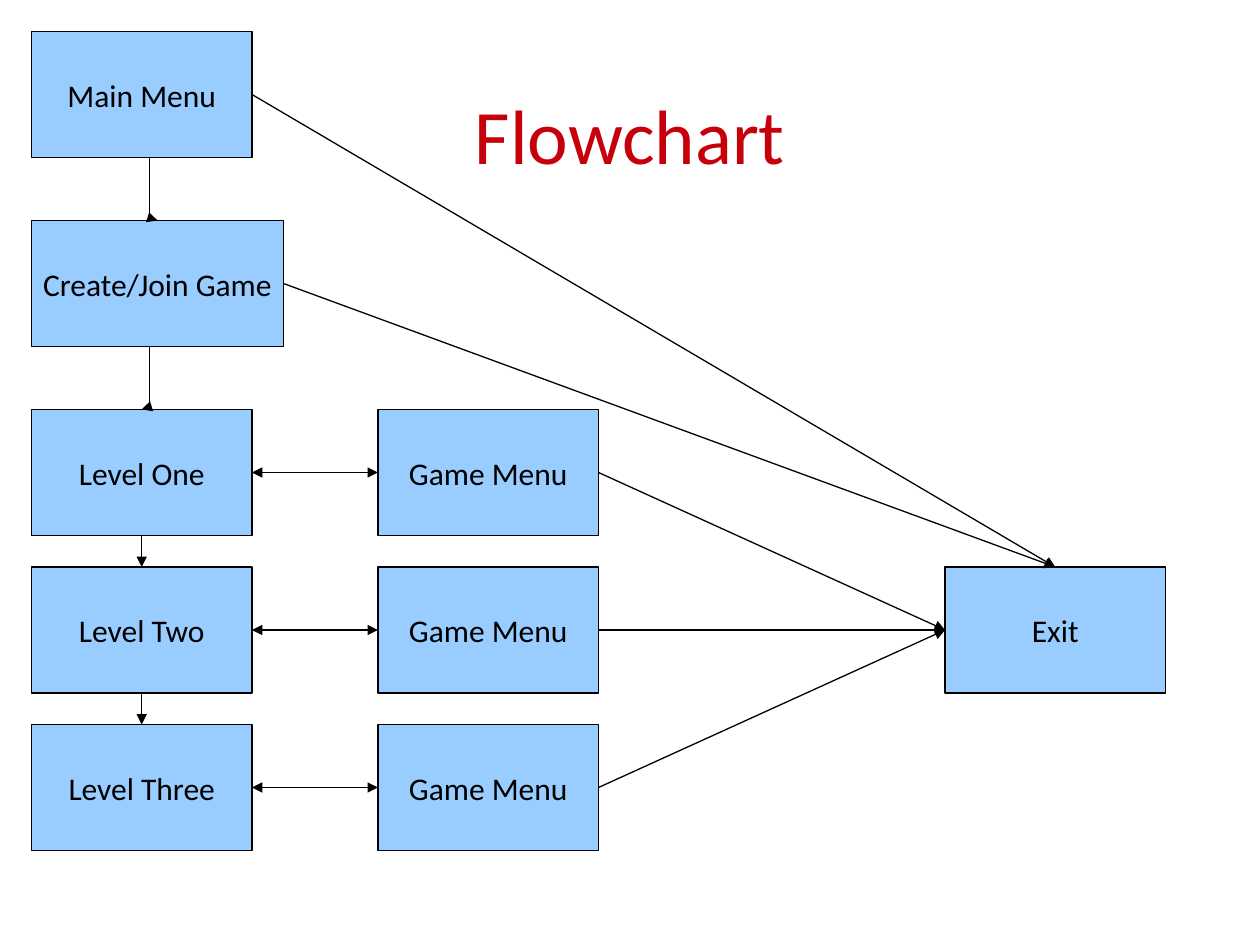
"""Build the game flowchart slide."""
from lxml import etree
from pptx import Presentation
from pptx.dml.color import RGBColor
from pptx.enum.shapes import MSO_CONNECTOR, MSO_SHAPE
from pptx.enum.text import MSO_ANCHOR, PP_ALIGN
from pptx.oxml.ns import qn
from pptx.util import Pt

EMU_PER_PX = 9525
RECTANGLE = MSO_SHAPE.RECTANGLE
STRAIGHT, ELBOW = MSO_CONNECTOR.STRAIGHT, MSO_CONNECTOR.ELBOW
MIDDLE, CENTER = MSO_ANCHOR.MIDDLE, PP_ALIGN.CENTER
TOP, LEFT, BOTTOM, RIGHT = range(4)


def px(*lengths):
    return [length * EMU_PER_PX for length in lengths]


def color(hex_code):
    return RGBColor.from_string(hex_code)


def write(frame, text, size, ink="000000", font="Calibri", wrap=False, spacing=None):
    frame.word_wrap = wrap
    frame.vertical_anchor = MIDDLE
    paragraph = frame.paragraphs[0]
    paragraph.alignment = CENTER
    if spacing:
        paragraph.line_spacing = spacing
    run = paragraph.add_run()
    run.text = text
    run.font.name = font
    run.font.size = Pt(size)
    run.font.color.rgb = color(ink)


class Flowchart:
    box_fill = "99CCFF"
    ink = "000000"
    line_width = Pt(0.75)

    def __init__(self, slide):
        self.slide = slide

    def title(self, text, left, top, width, height):
        heading = self.slide.shapes.add_textbox(*px(left, top, width, height))
        write(heading.text_frame, text, size=44, ink="C5000B", wrap=True, spacing=1.02)

    def step(self, text, left, top, width=168, height=96):
        box = self.slide.shapes.add_shape(RECTANGLE, *px(left, top, width, height))
        box.shadow.inherit = False
        box.fill.solid()
        box.fill.fore_color.rgb = color(self.box_fill)
        box.line.color.rgb = color(self.ink)
        box.line.width = self.line_width
        write(box.text_frame, text, size=18, ink=self.ink)
        return box

    def arrow(self, kind, start=(0, 0), end=(0, 0), both_ways=False):
        link = self.slide.shapes.add_connector(kind, *px(*start, *end))
        link.line.color.rgb = color(self.ink)
        link.line.width = self.line_width
        outline = link.line._get_or_add_ln()
        for tag in ["a:headEnd"] * both_ways + ["a:tailEnd"]:
            etree.SubElement(outline, qn(tag), type="triangle")
        etree.SubElement(link._element.spPr, qn("a:effectLst"))
        return link

    def join(self, source, source_side, target, target_side, kind=STRAIGHT, both_ways=False):
        link = self.arrow(kind, both_ways=both_ways)
        link.begin_connect(source, source_side)
        link.end_connect(target, target_side)


def main():
    deck = Presentation()
    deck.slide_width, deck.slide_height = px(960, 720)
    chart = Flowchart(deck.slides.add_slide(deck.slide_layouts[6]))

    chart.title("Flowchart", 72, 24, 816, 155)
    main_menu = chart.step("Main Menu", 24, 24)
    create_game = chart.step("Create/Join Game", 24, 168, width=192)
    levels, game_menus = [], []
    for row, name in enumerate(["Level One", "Level Two", "Level Three"]):
        top = 312 + 120 * row
        levels.append(chart.step(name, 24, top))
        game_menus.append(chart.step("Game Menu", 288, top))
    exit_step = chart.step("Exit", 720, 432)

    for level, game_menu in zip(levels, game_menus):
        chart.join(level, RIGHT, game_menu, LEFT, kind=ELBOW, both_ways=True)
    chart.arrow(ELBOW, (108, 120), (120, 168))
    chart.arrow(ELBOW, (120, 264), (108, 312))
    for level, next_level in zip(levels, levels[1:]):
        chart.join(level, BOTTOM, next_level, TOP)
    for opening_step in (main_menu, create_game):
        chart.join(opening_step, RIGHT, exit_step, TOP)
    for game_menu in game_menus:
        chart.join(game_menu, RIGHT, exit_step, LEFT)

    deck.save("out.pptx")


if __name__ == "__main__":
    main()
